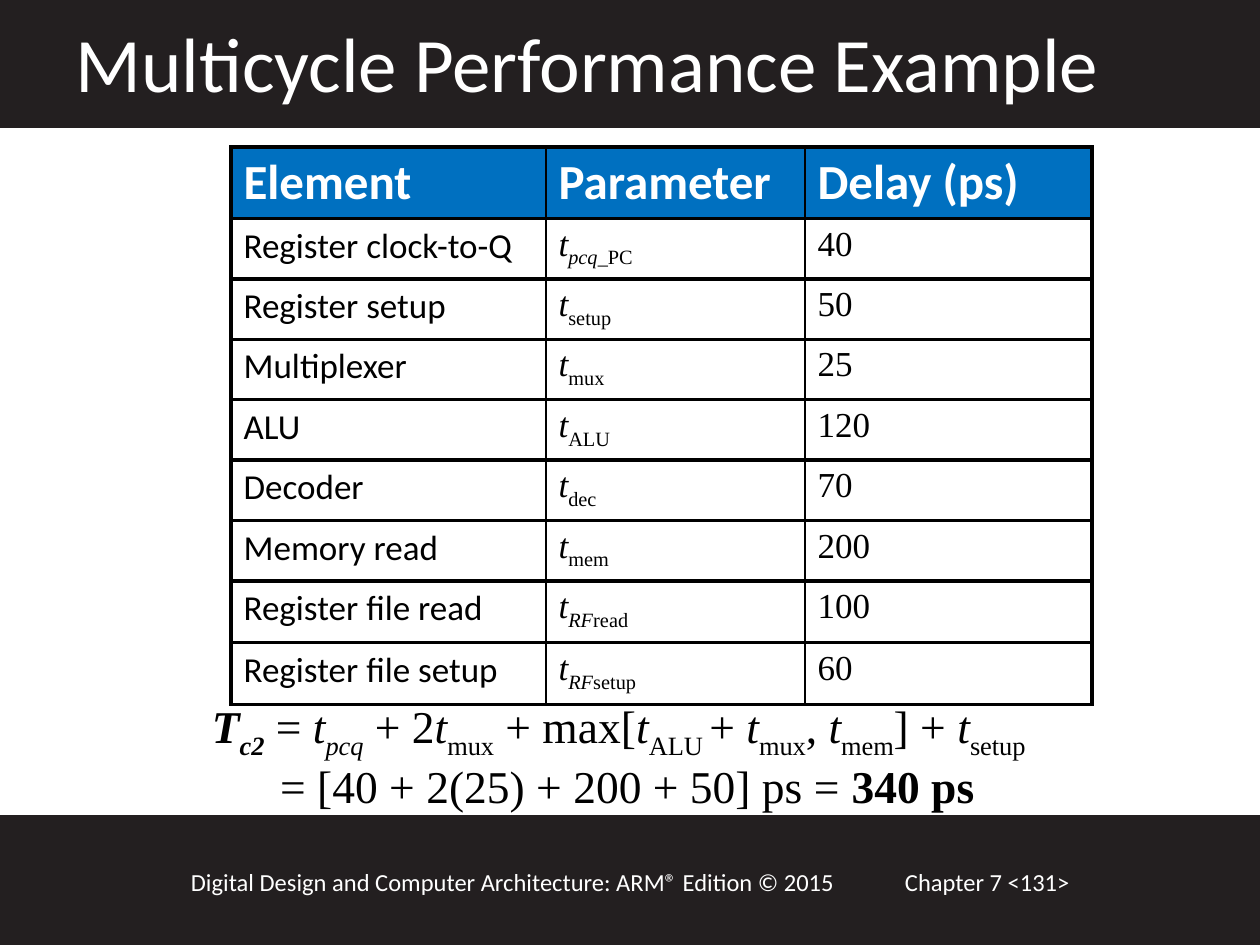
from lxml import etree
from pptx import Presentation
from pptx.dml.color import RGBColor
from pptx.enum.shapes import MSO_SHAPE
from pptx.oxml.ns import qn
from pptx.util import Pt

RECT = MSO_SHAPE.RECTANGLE
DARK = RGBColor(0x23, 0x1F, 0x20)
BLUE = RGBColor(0x00, 0x70, 0xC0)
WHITE = RGBColor(0xFF, 0xFF, 0xFF)
BLACK = RGBColor(0x00, 0x00, 0x00)
SANS, SERIF = "Calibri", "Times New Roman"
THICK, THIN = 2.25, 1


class Deck:
    """Holds the style and the current slide; all lengths are points."""

    def __init__(self, wide, high):
        self.prs = Presentation()
        self.prs.slide_width, self.prs.slide_height = Pt(wide), Pt(high)
        self.slide = self.prs.slides.add_slide(self.prs.slide_layouts[6])

    def bar(self, x, y, w, h):
        shape = self.slide.shapes.add_shape(RECT, Pt(x), Pt(y), Pt(w), Pt(h))
        shape.shadow.inherit = False
        shape.fill.solid()
        shape.fill.fore_color.rgb = DARK
        shape.line.color.rgb = DARK
        shape.line.width = Pt(2)

    def style(self, run, size, face, color, marks=""):
        """Marks: b bold, i italic, s subscript."""
        font = run.font
        font.size, font.name = Pt(size), face
        font.color.rgb = color
        font.bold, font.italic = "b" in marks, "i" in marks
        if "s" in marks:
            run._r.get_or_add_rPr().set("baseline", "-25000")

    def runs(self, para, parts, size, face, color):
        for text, marks in parts:
            run = para.add_run()
            run.text = text
            self.style(run, size, face, color, marks)

    def box(self, x, y, w, h):
        shape = self.slide.shapes.add_textbox(Pt(x), Pt(y), Pt(w), Pt(h))
        frame = shape.text_frame
        frame.word_wrap = True
        return frame

    def label(self, x, y, w, h, text, size):
        frame = self.box(x, y, w, h)
        frame.text = text
        self.style(frame.paragraphs[0].runs[0], size, SANS, WHITE)

    def math(self, x, y, w, h, lines, size):
        frame = self.box(x, y, w, h)
        for n, (left, hang, parts) in enumerate(lines):
            para = frame.add_paragraph() if n else frame.paragraphs[0]
            props = para._p.get_or_add_pPr()
            props.set("marL", str(Pt(left)))
            props.set("indent", str(Pt(-hang)))
            para.line_spacing = 0.9
            if n:
                para.space_before = Pt(size * 0.2)
            self.runs(para, parts, size, SERIF, BLACK)

    def edge(self, cell, sides):
        props = cell._tc.get_or_add_tcPr()
        for n, (side, width) in enumerate(sides):
            line = etree.Element(qn("a:" + side), w=str(Pt(width)))
            fill = etree.SubElement(line, qn("a:solidFill"))
            etree.SubElement(fill, qn("a:srgbClr"), val=str(BLACK))
            props.insert(n, line)

    def table(self, x, y, cols, highs, head, rows):
        table = self.slide.shapes.add_table(
            len(highs), len(cols), Pt(x), Pt(y), Pt(sum(cols)), Pt(sum(highs))
        ).table
        for col, wide in zip(table.columns, cols):
            col.width = Pt(wide)
        for row, high in zip(table.rows, highs):
            row.height = Pt(high)
        last = len(cols) - 1
        for r, row in enumerate([head] + rows):
            for c, item in enumerate(row):
                cell = table.cell(r, c)
                cell.fill.solid()
                cell.fill.fore_color.rgb = WHITE if r else BLUE
                para = cell.text_frame.paragraphs[0]
                if r == 0:
                    self.runs(para, [(item, "b")], 28, SANS, WHITE)
                elif c == 1:
                    parts = [("t", "i")] + item
                    self.runs(para, parts, 20, SERIF, BLACK)
                else:
                    face = SERIF if c else SANS
                    self.runs(para, [(item, "")], 20, face, BLACK)
                self.edge(cell, [("lnL", THIN if c else THICK),
                                 ("lnR", THIN if c < last else THICK),
                                 ("lnT", THICK), ("lnB", THICK)])


def main():
    deck = Deck(720, 540)

    # Bars and footer
    deck.bar(0, 466.5, 720, 73)
    deck.bar(0, 0, 720, 72)
    deck.label(510, 492, 156, 24, "Chapter 7 <131>", 14)
    deck.label(102, 492, 414, 24,
               "Digital Design and Computer Architecture: ARM® Edition © 2015", 14)

    # Formula
    total = [("T", "bi"), ("c2", "bis"), (" = ", ""), ("t", "i"), ("pcq", "is"),
             (" + 2", ""), ("t", "i"), ("mux", "s"), (" + max[", ""),
             ("t", "i"), ("ALU ", "s"), ("+ ", ""), ("t", "i"), ("mux", "s"),
             (", ", ""), ("t", "i"), ("mem", "s"), ("] + ", ""),
             ("t", "i"), ("setup", "s")]
    value = [("= [40 + 2(25) + 200 + 50] ps = ", ""), ("340 ps", "b")]
    deck.math(114, 396, 546, 84, [(27, 27, total), (39, 0, value)], 26)

    # Title
    deck.label(36, 5.5, 624, 60.5, "Multicycle Performance Example", 44)

    # Delay table: name, subscript of t, delay
    rows = [
        ["Register clock-to-Q", [("pcq", "is"), ("_PC", "s")], "40"],
        ["Register setup", [("setup", "s")], "50"],
        ["Multiplexer", [("mux", "s")], "25"],
        ["ALU", [("ALU", "s")], "120"],
        ["Decoder", [("dec", "s")], "70"],
        ["Memory read", [("mem", "s")], "200"],
        ["Register file read", [("RF", "is"), ("read", "s")], "100"],
        ["Register file setup", [("RF", "is"), ("setup", "s")], "60"],
    ]
    deck.table(132, 84, [180, 148, 164], [34] * 7 + [35.25] * 2,
               ["Element", "Parameter", "Delay (ps)"], rows)

    deck.prs.save("out.pptx")


if __name__ == "__main__":
    main()
